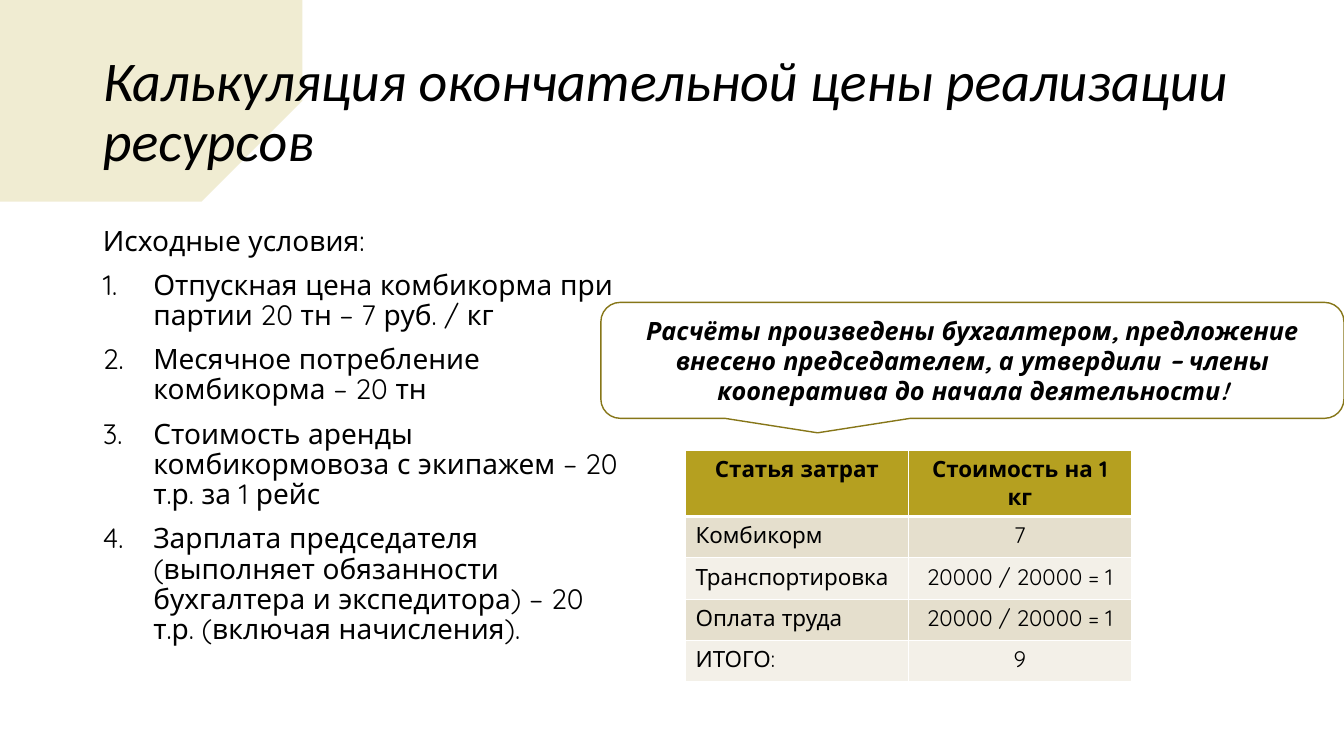
from lxml import etree
from pptx import Presentation
from pptx.dml.color import RGBColor
from pptx.enum.shapes import MSO_SHAPE
from pptx.enum.text import MSO_ANCHOR, MSO_AUTO_SIZE, PP_ALIGN
from pptx.oxml.ns import qn
from pptx.util import Inches, Pt

LEFT, CENTER = PP_ALIGN.LEFT, PP_ALIGN.CENTER
MIDDLE, TOP = MSO_ANCHOR.MIDDLE, MSO_ANCHOR.TOP
CALLOUT = MSO_SHAPE.ROUNDED_RECTANGULAR_CALLOUT
NO_AUTOFIT = MSO_AUTO_SIZE.NONE

BLACK = RGBColor(0x00, 0x00, 0x00)
WHITE = RGBColor(0xFF, 0xFF, 0xFF)
OLIVE = RGBColor(0xB5, 0xA0, 0x20)
DARK_OLIVE = RGBColor(0x86, 0x76, 0x18)
SAND = RGBColor(0xE5, 0xDF, 0xCD)
PALE_SAND = RGBColor(0xF3, 0xF0, 0xE8)

BRUSH_OUTLINE = [
    (0, 0.34), (0.06, 0.35), (0.25, 0.37), (0.66, 0.38), (1.02, 0.37),
    (1.51, 0.38), (1.94, 0.41), (2.48, 0.41), (2.67, 0.41), (2.8, 0.47),
    (2.71, 0.49), (2.55, 0.54), (2.53, 0.57), (2.56, 0.59), (2.62, 0.62),
    (2.5, 0.62), (2.38, 0.66), (2.46, 0.68), (2.56, 0.7), (2.66, 0.71),
    (2.75, 0.74), (2.51, 0.75), (2.63, 0.78), (2.73, 0.81), (2.8, 0.82),
    (2.88, 0.83), (2.9, 0.85), (2.87, 0.88), (2.84, 0.88), (2.63, 0.88),
    (2.95, 0.92), (3.3, 0.94), (3.21, 0.97), (3.18, 1.06), (3.07, 1.11),
    (3, 1.13), (2.83, 1.16), (2.8, 1.2), (2.78, 1.25), (2.74, 1.28),
    (3.08, 1.28), (2.69, 1.38), (2.73, 1.42), (2.52, 1.48), (2.63, 1.48),
    (2.34, 1.6), (1.97, 1.72), (1.52, 1.8), (1.02, 1.88), (0.65, 1.91),
    (0.23, 1.9), (0.07, 1.89), (0, 1.88),
]
CONDITIONS = [
    "Исходные условия:",
    "Отпускная цена комбикорма при партии 20 тн – 7 руб. / кг",
    "Месячное потребление комбикорма – 20 тн",
    "Стоимость аренды комбикормовоза с экипажем – 20 т.р. за 1 рейс",
    "Зарплата председателя (выполняет обязанности бухгалтера и экспедитора) – 20 т.р. (включая начисления).",
]
COSTS = [
    ("Статья затрат", "Стоимость на 1 кг"),
    ("Комбикорм", "7"),
    ("Транспортировка", "20000 / 20000 = 1"),
    ("Оплата труда", "20000 / 20000 = 1"),
    ("ИТОГО:", "9"),
]


def format_text(paragraph, size, font="Quicksand", bold=False, italic=False, align=LEFT):
    paragraph.alignment = align
    for run in paragraph.runs:
        run.font.name = font
        run.font.size = Pt(size)
        run.font.bold = bold
        run.font.italic = italic
        run.font.color.rgb = BLACK


def place(shape, left, top, width, height):
    shape.left, shape.top = Inches(left), Inches(top)
    shape.width, shape.height = Inches(width), Inches(height)


presentation = Presentation()
presentation.slide_width = Inches(13.33)
presentation.slide_height = Inches(7.5)
slide = presentation.slides.add_slide(presentation.slide_layouts[1])
shapes = slide.shapes

# Title
title = shapes.title
place(title, 0.92, 0.4, 11.5, 1.45)
title.text_frame.text = "Калькуляция окончательной цены реализации ресурсов"
title.text_frame.vertical_anchor = MIDDLE
title.text_frame.auto_size = NO_AUTOFIT
title.text_frame.paragraphs[0].line_spacing = 0.9
format_text(title.text_frame.paragraphs[0], 40, font="Calibri", italic=True)

# Translucent brush stroke behind the title
builder = shapes.build_freeform(*BRUSH_OUTLINE[0], scale=Inches(1))
builder.add_line_segments(BRUSH_OUTLINE[1:], close=True)
brush = builder.convert_to_shape()
brush.shadow.inherit = False
brush.line.fill.background()
brush.fill.solid()
brush.fill.fore_color.rgb = OLIVE
brush_color = brush.element.spPr.find(qn("a:solidFill")).find(qn("a:srgbClr"))
etree.SubElement(brush_color, qn("a:alpha"), val="20000")
title.element.addprevious(brush.element)

# Numbered conditions
body = slide.placeholders[1]
place(body, 0.92, 2.2, 5.4, 4.55)
body.text_frame.text = "\n".join(CONDITIONS)
body.text_frame.vertical_anchor = TOP
body.text_frame.auto_size = NO_AUTOFIT
for index, paragraph in enumerate(body.text_frame.paragraphs):
    format_text(paragraph, 20)
    paragraph.line_spacing = 0.9
    paragraph.space_before = Pt(10)
    properties = paragraph._p.get_or_add_pPr()
    indent = Inches(0.5) if index else 0
    properties.set("marL", str(indent))
    properties.set("indent", str(-indent))
    if index:
        etree.SubElement(properties, qn("a:buFont"), typeface="Quicksand")
        etree.SubElement(properties, qn("a:buAutoNum"), type="arabicPeriod")
    else:
        etree.SubElement(properties, qn("a:buNone"))

# Cost table
table = shapes.add_table(
    len(COSTS), 2, Inches(6.8), Inches(4.47), Inches(4.42), Inches(0.41 * len(COSTS))
).table
for row_index, row in enumerate(COSTS):
    is_header = row_index == 0
    for column_index, text in enumerate(row):
        cell = table.cell(row_index, column_index)
        cell.text_frame.text = text
        align = CENTER if is_header or column_index else LEFT
        format_text(cell.text_frame.paragraphs[0], 16, bold=is_header, align=align)
        cell_properties = cell._tc.get_or_add_tcPr()
        for side in ("lnL", "lnR", "lnT", "lnB"):
            thick = (is_header and side == "lnB") or (row_index == 1 and side == "lnT")
            border = etree.SubElement(
                cell_properties, qn("a:" + side), w=str(Pt(3 if thick else 1))
            )
            border_fill = etree.SubElement(border, qn("a:solidFill"))
            etree.SubElement(border_fill, qn("a:srgbClr"), val=str(WHITE))
        cell.fill.solid()
        band = SAND if row_index % 2 else PALE_SAND
        cell.fill.fore_color.rgb = OLIVE if is_header else band

# Callout above the table
callout = shapes.add_shape(CALLOUT, Inches(5.96), Inches(3), Inches(7.37), Inches(1.15))
callout.shadow.inherit = False
callout.fill.solid()
callout.fill.fore_color.rgb = WHITE
callout.line.color.rgb = DARK_OLIVE
callout.line.width = Pt(1)
callout.text_frame.word_wrap = True
callout.text_frame.vertical_anchor = MIDDLE
callout.text_frame.text = (
    "Расчёты произведены бухгалтером, предложение внесено председателем, "
    "а утвердили – члены кооператива до начала деятельности!"
)
format_text(callout.text_frame.paragraphs[0], 18, bold=True, italic=True, align=CENTER)

presentation.save("out.pptx")
